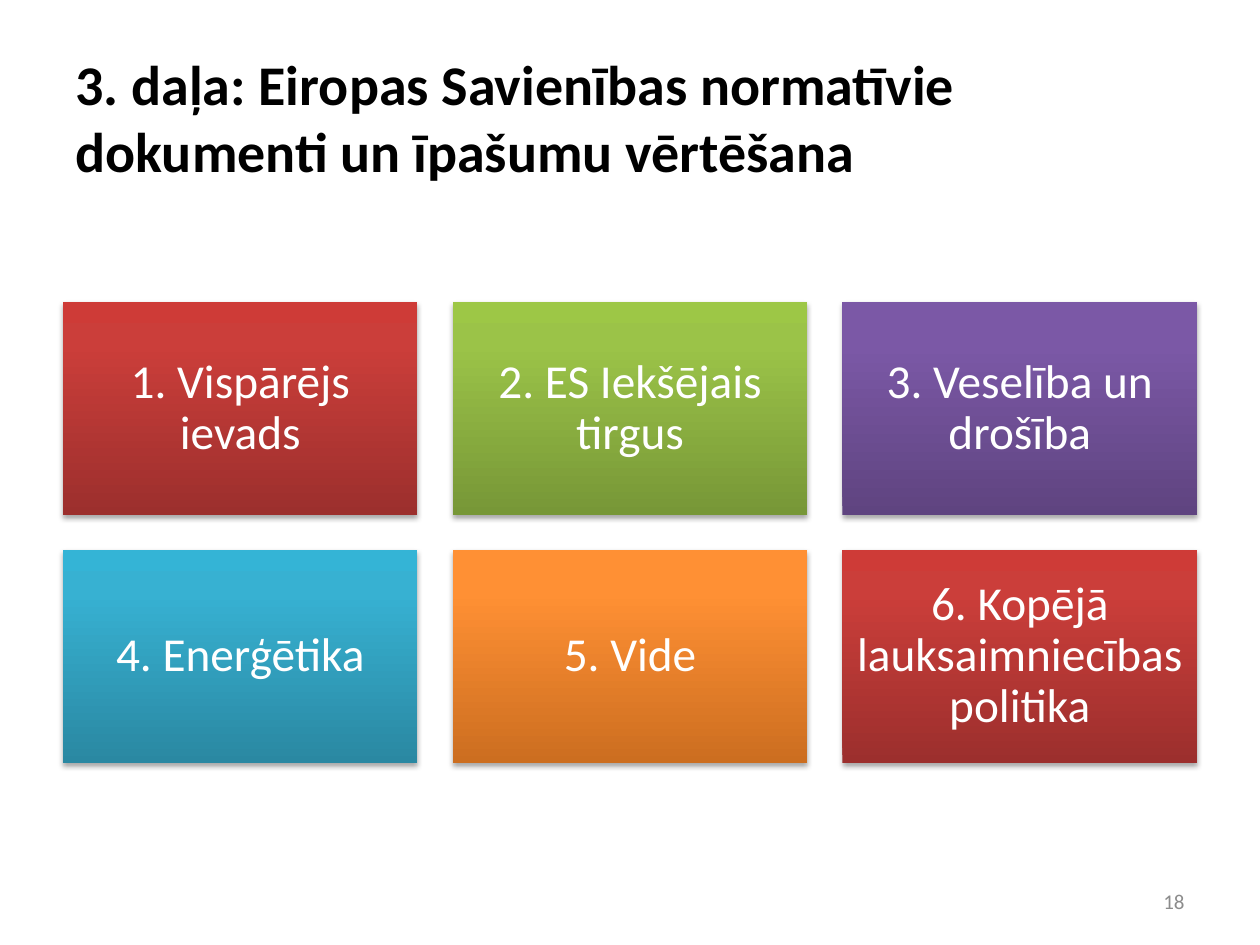
from copy import deepcopy

from lxml import etree
from pptx import Presentation
from pptx.dml.color import RGBColor
from pptx.enum.shapes import MSO_SHAPE
from pptx.enum.text import MSO_ANCHOR, MSO_AUTO_SIZE, PP_ALIGN
from pptx.oxml.ns import qn
from pptx.util import Cm, Pt

RECTANGLE = MSO_SHAPE.RECTANGLE
MIDDLE = MSO_ANCHOR.MIDDLE
NO_AUTOFIT = MSO_AUTO_SIZE.NONE
LEFT, CENTER, RIGHT = PP_ALIGN.LEFT, PP_ALIGN.CENTER, PP_ALIGN.RIGHT

FONT = "Calibri"
TITLE_ONLY = 5
BLACK = RGBColor(0x00, 0x00, 0x00)
WHITE = RGBColor(0xFF, 0xFF, 0xFF)
GREY = RGBColor(0x8C, 0x8C, 0x8C)

# Gradients from the bottom to the top of a tile
STOP_POSITIONS = (0, 0.8, 1)
RED = (RGBColor(0x9C, 0x2F, 0x2D), RGBColor(0xCB, 0x3E, 0x3A), RGBColor(0xCE, 0x3B, 0x37))
GREEN = (RGBColor(0x77, 0x97, 0x37), RGBColor(0x9B, 0xC3, 0x48), RGBColor(0x9D, 0xC7, 0x46))
PURPLE = (RGBColor(0x5F, 0x44, 0x80), RGBColor(0x7B, 0x58, 0xA6), RGBColor(0x7C, 0x57, 0xA8))
BLUE = (RGBColor(0x2A, 0x88, 0xA2), RGBColor(0x37, 0xB1, 0xD2), RGBColor(0x34, 0xB4, 0xD6))
ORANGE = (RGBColor(0xCC, 0x6E, 0x20), RGBColor(0xFF, 0x90, 0x34), RGBColor(0xFF, 0x91, 0x36))

TITLE = "3. daļa: Eiropas Savienības normatīvie dokumenti un īpašumu vērtēšana"
PAGE_NUMBER = "18"
TOPICS = (
    ("1. Vispārējs ievads", RED),
    ("2. ES Iekšējais tirgus", GREEN),
    ("3. Veselība un drošība", PURPLE),
    ("4. Enerģētika", BLUE),
    ("5. Vide", ORANGE),
    ("6. Kopējā lauksaimniecības politika", RED),
)


def write(shape, text, size, color, alignment, bold=False):
    """Fill a shape with one formatted, vertically centred paragraph."""
    frame = shape.text_frame
    frame.word_wrap = True
    frame.auto_size = NO_AUTOFIT
    frame.vertical_anchor = MIDDLE
    para = frame.paragraphs[0]
    para.alignment = alignment
    span = para.add_run()
    span.text = text
    span.font.name = FONT
    span.font.size = Pt(size)
    span.font.bold = bold
    span.font.color.rgb = color
    return para


def fill_gradient(shape, colors):
    shape.fill.gradient()
    shape.fill.gradient_angle = 90
    # The default gradient has two stops; a third is needed
    stop_list = shape.fill._fill._gradFill.find(qn("a:gsLst"))
    stop_list.append(deepcopy(stop_list[-1]))
    for stop, position, color in zip(shape.fill.gradient_stops, STOP_POSITIONS, colors):
        stop.position = position
        stop.color.rgb = color


def add_soft_shadow(shape):
    shape.shadow.inherit = False
    effects = shape._element.spPr.find(qn("a:effectLst"))
    shadow = etree.SubElement(
        effects, qn("a:outerShdw"), blurRad=str(Pt(3.1)), dist=str(Pt(1.8)),
        dir="5400000", rotWithShape="0")
    color = etree.SubElement(shadow, qn("a:srgbClr"), val=str(BLACK))
    etree.SubElement(color, qn("a:alpha"), val="35000")


def place_title(page, left, top, width, height):
    title = page.shapes.title
    title.left, title.top, title.width, title.height = left, top, width, height
    write(title, TITLE, 32, BLACK, LEFT, bold=True)


def add_tile(page, left, top, width, height, text, colors):
    tile = page.shapes.add_shape(RECTANGLE, left, top, width, height)
    fill_gradient(tile, colors)
    tile.line.fill.background()
    add_soft_shadow(tile)
    frame = tile.text_frame
    frame.margin_left = frame.margin_right = Cm(0.28)
    frame.margin_top = frame.margin_bottom = Cm(0.28)
    para = write(tile, text, 27, WHITE, CENTER)
    para.line_spacing = 0.9


def add_topic_grid(page, left, top, width, height, columns=3, gap=Cm(0.71)):
    rows = len(TOPICS) // columns
    tile_width = (width - gap * (columns - 1)) // columns
    tile_height = (height - gap * (rows - 1)) // rows
    for index, (text, colors) in enumerate(TOPICS):
        row, column = divmod(index, columns)
        add_tile(page, left + column * (tile_width + gap), top + row * (tile_height + gap),
                 tile_width, tile_height, text, colors)


def add_page_number(page, left, top, width, height):
    box = page.shapes.add_textbox(left, top, width, height)
    write(box, PAGE_NUMBER, 12, GREY, RIGHT)


def main():
    deck = Presentation()
    deck.slide_width, deck.slide_height = Cm(25.4), Cm(19.05)
    page = deck.slides.add_slide(deck.slide_layouts[TITLE_ONLY])
    margin, content_width = Cm(1.27), Cm(22.86)
    place_title(page, margin, Cm(0.76), content_width, Cm(3.18))
    add_topic_grid(page, margin, Cm(6.09), content_width, Cm(9.29))
    add_page_number(page, Cm(18.2), Cm(17.66), Cm(5.93), Cm(1.01))
    deck.save("out.pptx")


if __name__ == "__main__":
    main()
